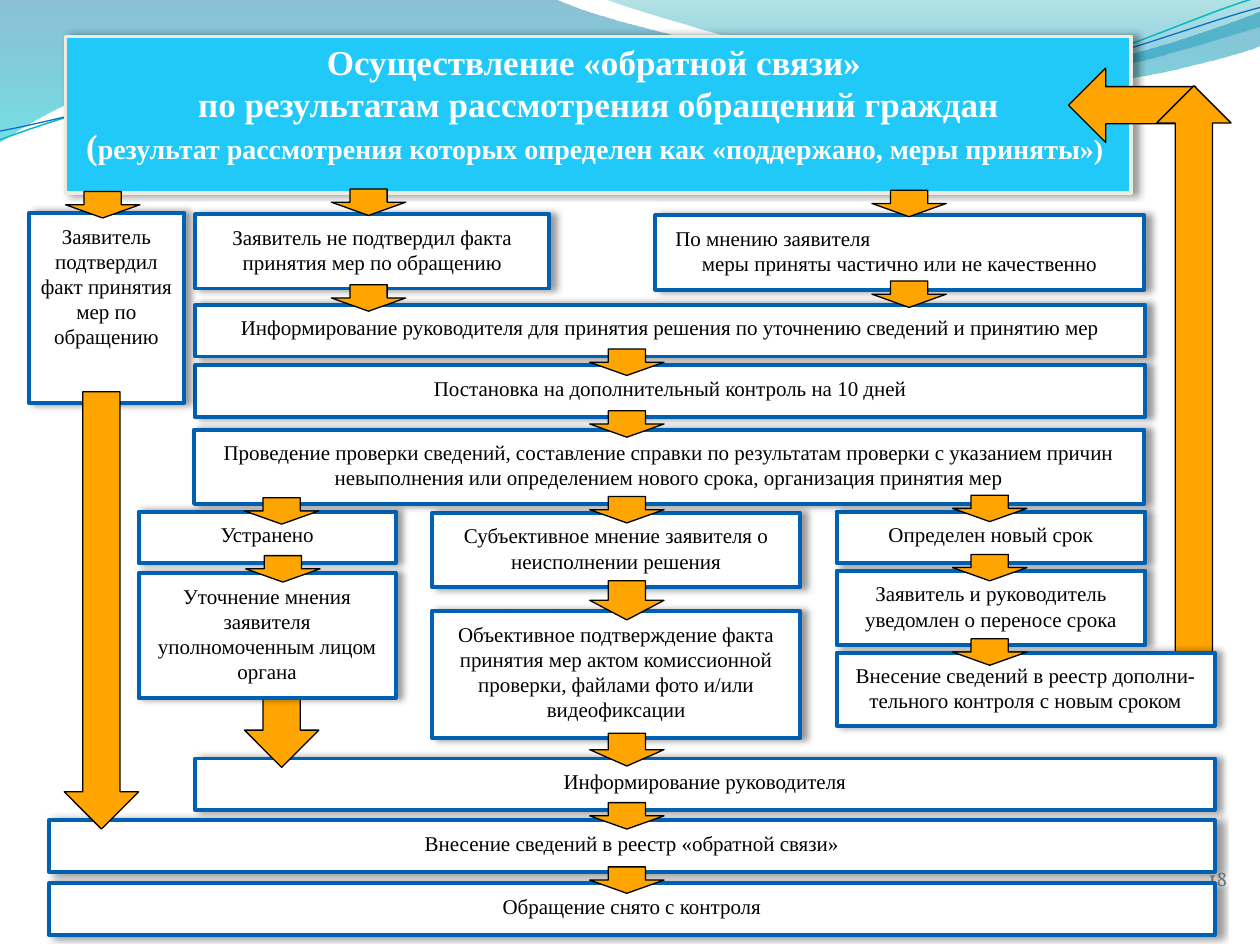
from lxml.etree import SubElement
from pptx import Presentation
from pptx.dml.color import RGBColor
from pptx.enum.shapes import MSO_SHAPE
from pptx.enum.text import MSO_ANCHOR, PP_ALIGN
from pptx.oxml import parse_xml
from pptx.oxml.ns import nsdecls, qn
from pptx.util import Pt

PX = 9144  # 100 px to the inch
FONT = "Times New Roman"
COLORS = {
    "title": "20C9F8", "title_line": "EEECE1", "box": "FFFFFF", "box_line": "0061B2",
    "arrow": "FEA501", "black": "000000", "white": "FFFFFF", "number": "8C8C8C",
    "wave_teal": "0AB8BF", "wave_blue": "0F6FC6",
}
COLORS = {name: RGBColor.from_string(value) for name, value in COLORS.items()}

presentation = Presentation()
presentation.slide_width = 1000 * PX
presentation.slide_height = 750 * PX
slide = presentation.slides.add_slide(presentation.slide_layouts[6])
shapes = slide.shapes


def add_box(left, top, width, height, text, fill="box", line="box_line", color="black",
            size=12, bold=False, space_after=6, inset_top=8):
    """Add a shadowed rectangle with centred text, one paragraph per line of text."""
    box = shapes.add_shape(MSO_SHAPE.RECTANGLE, left * PX, top * PX, width * PX, height * PX)
    box.fill.solid()
    box.fill.fore_color.rgb = COLORS[fill]
    box.line.color.rgb = COLORS[line]
    box.line.width = Pt(2.25)
    box.shadow.inherit = False
    effects = box._element.spPr.find(qn("a:effectLst"))
    shadow = SubElement(effects, qn("a:outerShdw"), blurRad=str(Pt(4)), dist=str(Pt(3)),
                        dir="0", algn="l", rotWithShape="0")
    shade = SubElement(shadow, qn("a:srgbClr"), val="000000")
    SubElement(shade, qn("a:alpha"), val="40000")
    frame = box.text_frame
    frame.word_wrap = True
    frame.vertical_anchor = MSO_ANCHOR.TOP
    frame.margin_left = frame.margin_right = frame.margin_bottom = 8 * PX
    frame.margin_top = inset_top * PX
    frame.text = text
    for paragraph in frame.paragraphs:
        paragraph.alignment = PP_ALIGN.CENTER
        for run in paragraph.runs:
            run.font.name = FONT
            run.font.size = Pt(size)
            run.font.bold = bold
            run.font.color.rgb = COLORS[color]
    frame.paragraphs[-1].space_after = Pt(space_after)
    return box


def add_arrow(left, top, height=21, rotation=0):
    arrow = shapes.add_shape(MSO_SHAPE.DOWN_ARROW, left * PX, top * PX, 59 * PX, height * PX)
    arrow.rotation = rotation
    arrow.shadow.inherit = False
    arrow.fill.solid()
    arrow.fill.fore_color.rgb = COLORS["arrow"]
    arrow.line.color.rgb = COLORS["black"]
    arrow.line.width = Pt(0.75)


# Waves along the top edge: start, then lines (1 point) and Bézier curves (3 points).
# A list of gradient stops (position, colour, opacity) fills the wave; otherwise it is a line.
waves = [
    ((0, 0), [[(440, -1)], [(476, 17), (664, 63), (758, 63)], [(853, 63), (958, 26), (1000, 9)],
              [(1001, 36)], [(983, 44), (870, 76), (746, 75)], [(622, 75), (382, 28), (257, 34)],
              [(129, 36), (46, 83), (-1, 113)], [(0, 0)]],
     [(0, "0074A1", 45), (100, "00C6CF", 55)]),
    ((479, -1), [[(509, 11), (682, 62), (769, 65)], [(856, 69), (961, 32), (1000, 21)],
                 [(1000, 0)], [(479, -1)]],
     [(0, "00A1A9", 30), (80, "008BBF", 45)]),
    ((0, 111), [[(48, 93), (158, 57), (277, 52)], [(395, 47), (593, 89), (713, 80)],
                [(833, 71), (938, 15), (998, -2)]], ("wave_teal", 0.85)),
    ((0, 104), [[(47, 96), (164, 61), (283, 56)], [(403, 51), (597, 84), (717, 75)],
                [(836, 67), (941, 21), (1000, 6)]], ("wave_blue", 0.75)),
]
for start, segments, style in waves:
    filled = isinstance(style, list)
    builder = shapes.build_freeform(*start, scale=PX)
    builder.add_line_segments([point for segment in segments for point in segment], close=filled)
    wave = builder.convert_to_shape()
    wave.shadow.inherit = False

    # Turn each group of three line segments into one cubic curve
    lines = iter(list(wave._element.iter(qn("a:lnTo"))))
    for segment in segments:
        group = [next(lines) for _ in segment]
        if len(group) == 3:
            group[0].addprevious(parse_xml(f'<a:cubicBezTo {nsdecls("a")}/>'))
            curve = group[0].getprevious()
            for line in group:
                curve.append(line[0])
                line.getparent().remove(line)

    if filled:
        wave.line.fill.background()
        stops = "".join(
            f'<a:gs pos="{position * 1000}"><a:srgbClr val="{color}">'
            f'<a:alpha val="{opacity * 1000}"/></a:srgbClr></a:gs>'
            for position, color, opacity in style)
        gradient = parse_xml(f'<a:gradFill {nsdecls("a")}><a:gsLst>{stops}</a:gsLst>'
                             '<a:lin ang="5400000" scaled="0"/></a:gradFill>')
        wave._element.spPr.find(qn("a:custGeom")).addnext(gradient)
    else:
        wave.fill.background()
        wave.line.color.rgb = COLORS[style[0]]
        wave.line.width = Pt(style[1])

# Slide number
number = shapes.add_textbox(741 * PX, 669 * PX, 233 * PX, 38 * PX)
frame = number.text_frame
frame.word_wrap = True
frame.vertical_anchor = MSO_ANCHOR.BOTTOM
frame.margin_left = frame.margin_top = frame.margin_right = frame.margin_bottom = 0
frame.text = "18"
frame.paragraphs[0].alignment = PP_ALIGN.RIGHT
font = frame.paragraphs[0].runs[0].font
font.name = "Vollkorn"
font.size = Pt(12)
font.color.rgb = COLORS["number"]

# Title
title = add_box(52, 29, 846, 124,
                "Осуществление «обратной связи» \nпо результатам рассмотрения обращений граждан\n(",
                "title", "title_line", "white", 20, True, 0, 3)
detail = title.text_frame.paragraphs[-1].add_run()
detail.text = "результат рассмотрения которых определен как «поддержано, меры приняты») "
detail.font.name = FONT
detail.font.size = Pt(16)
detail.font.bold = True
detail.font.color.rgb = COLORS["white"]

# Return path from the new deadline to the title, behind the boxes
add_arrow(869, 33, 101, 90)
add_arrow(918, 68, 451, 180)

boxes = [
    (155, 290, 754, 41, "Постановка на дополнительный контроль на 10 дней"),
    (23, 169, 123, 151, "Заявитель подтвердил факт принятия мер по обращению"),
    (110, 406, 204, 41, "Устранено"),
    (39, 701, 925, 41, "Обращение снято с контроля"),
    (39, 651, 925, 41, "Внесение сведений в реестр «обратной связи»"),
    (664, 406, 245, 41, "Определен новый срок"),
    (520, 171, 388, 59, "По мнению заявителя\nмеры приняты частично или не качественно"),
    (155, 170, 281, 59, "Заявитель не подтвердил факта принятия мер по обращению"),
    (343, 407, 292, 59, "Субъективное мнение заявителя о неисполнении решения"),
    (154, 341, 754, 59, "Проведение проверки сведений, составление справки по результатам проверки "
     "с указанием причин невыполнения или определением нового срока, организация принятия мер"),
    (664, 518, 300, 58, "Внесение сведений в реестр дополни- тельного контроля с новым сроком"),
    (664, 453, 245, 59, "Заявитель и руководитель уведомлен о переносе срока"),
    (155, 242, 754, 41, "Информирование руководителя для принятия решения по уточнению сведений "
     "и принятию мер"),
    (155, 602, 809, 41, "Информирование руководителя"),
    (343, 485, 292, 101, "Объективное подтверждение факта принятия мер актом комиссионной "
     "проверки, файлами фото и/или видеофиксации"),
]
for box in boxes:
    paragraphs = add_box(*box).text_frame.paragraphs
    if len(paragraphs) == 2:  # the opinion box starts at the left
        paragraphs[0].alignment = PP_ALIGN.LEFT
        paragraphs[0]._p.get_or_add_pPr().set("marL", str(8 * PX))

# This arrow leaves from under its box
add_arrow(194, 548, 61)
add_box(110, 455, 204, 99, "Уточнение мнения заявителя уполномоченным лицом органа")

# Arrows by column: left edge, then tops with the height where it is not the usual one
arrow_columns = [
    (51, [(311, 347)]),
    (52, [(152,)]),
    (194, [(395,)]),
    (195, [(441,)]),
    (263, [(150,), (226,)]),
    (468, [(277,), (326,), (394,), (461, 31), (582, 26), (637,), (688,)]),
    (692, [(151,), (223,)]),
    (756, [(393,), (440,), (507,)]),
]
for left, arrows in arrow_columns:
    for arrow in arrows:
        add_arrow(left, *arrow)

presentation.save("out.pptx")
